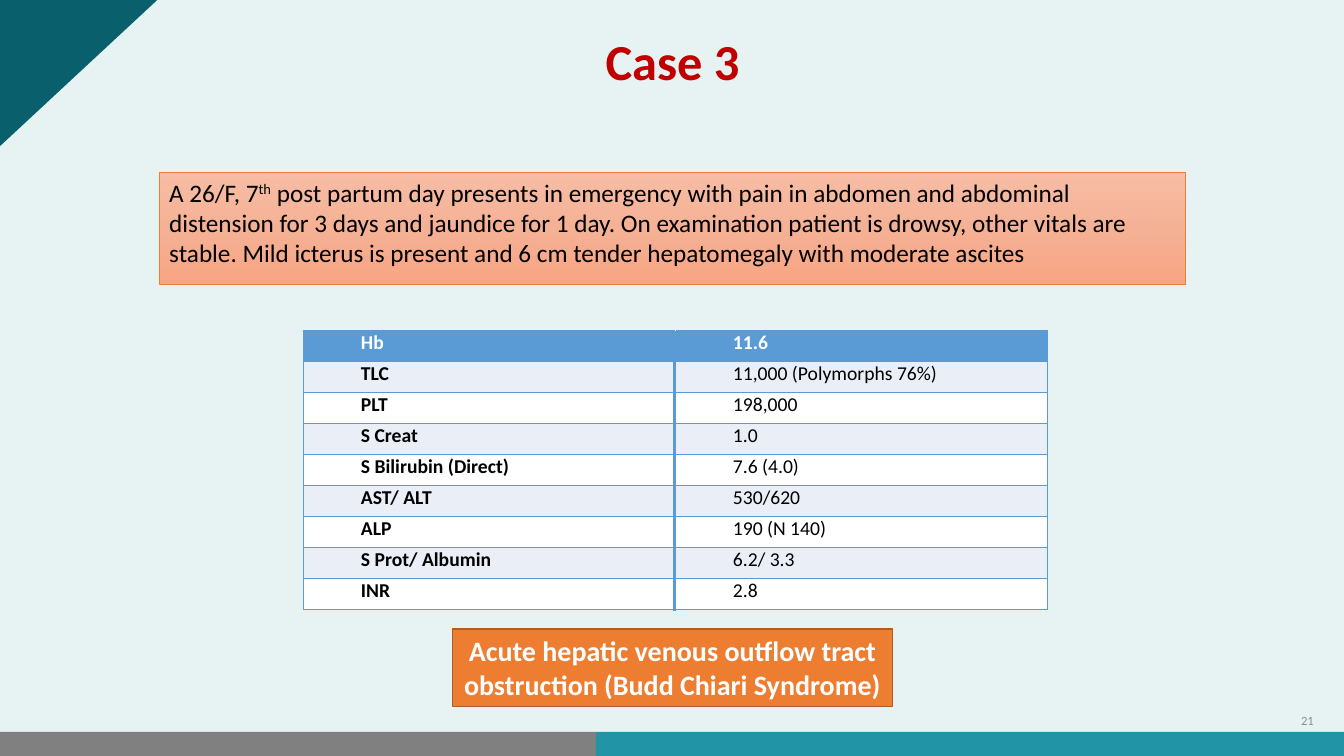
from copy import deepcopy
from dataclasses import dataclass

from lxml.etree import SubElement
from pptx import Presentation
from pptx.dml.color import RGBColor
from pptx.enum.shapes import MSO_CONNECTOR, MSO_SHAPE
from pptx.enum.text import MSO_ANCHOR, PP_ALIGN
from pptx.oxml import parse_xml
from pptx.oxml.ns import nsdecls, qn
from pptx.util import Inches, Pt


@dataclass(frozen=True)
class Theme:
    font: str = "Calibri"
    back: str = "E7F3F3"
    gray: str = "808080"
    dark: str = "095F6C"
    teal: str = "2194A6"
    red: str = "C00000"
    black: str = "000000"
    white: str = "FFFFFF"
    muted: str = "8C8C8C"
    orange: str = "ED7D31"
    rust: str = "AF5C24"
    blue: str = "5B9BD5"
    band: str = "EAEFF7"
    peach: tuple = ("F7BDA5", "F5B196", "F8A582")
    head: int = 36
    answer: int = 20
    body: int = 18
    cell: int = 14
    small: int = 9


THEME = Theme()


def write(frame, text, size=THEME.body, color=THEME.black, bold=False,
          align=PP_ALIGN.LEFT, anchor=MSO_ANCHOR.TOP, before=0, lines=None):
    frame.word_wrap = True
    frame.vertical_anchor = anchor
    para = frame.paragraphs[0]
    para.alignment = align
    para.space_before = Pt(before)
    para.line_spacing = lines
    for i, part in enumerate(text.split("^")):
        run = para.add_run()
        run.text = part
        font = run.font
        font.name, font.size, font.bold = THEME.font, Pt(size), bold
        font.color.rgb = RGBColor.from_string(color)
        if i % 2:
            font._element.set("baseline", "30000")
    return para


class Deck:
    def __init__(self, theme):
        self.theme = theme
        self.file = Presentation()
        self.file.slide_width = Inches(13.33)
        self.file.slide_height = Inches(7.5)
        self.slide = self.file.slides.add_slide(self.file.slide_layouts[5])
        self.shapes = self.slide.shapes
        self.paint(self.slide.background.fill, theme.back)

    def paint(self, fill, color):
        fill.solid()
        fill.fore_color.rgb = RGBColor.from_string(color)

    def title(self, text, *place):
        title = self.shapes.title
        title.left, title.top, title.width, title.height = map(Inches, place)
        write(title.text_frame, text, size=self.theme.head, color=self.theme.red,
              bold=True, align=PP_ALIGN.CENTER, anchor=MSO_ANCHOR.MIDDLE, lines=0.8)

    def box(self, place, fill, line=None, width=1):
        box = self.shapes.add_shape(MSO_SHAPE.RECTANGLE, *map(Inches, place))
        box.shadow.inherit = False
        if isinstance(fill, tuple):
            self.blend(box, fill)
        else:
            self.paint(box.fill, fill)
        if line:
            box.line.color.rgb = RGBColor.from_string(line)
            box.line.width = Pt(width)
        else:
            box.line.fill.background()
        return box.text_frame

    def blend(self, box, colors):
        box.fill.gradient()
        box.fill.gradient_angle = 270
        first = box._element.spPr.find(".//" + qn("a:gs"))
        first.addnext(deepcopy(first))
        last = len(colors) - 1
        for i, (stop, color) in enumerate(zip(box.fill.gradient_stops, colors)):
            stop.position = i / last
            stop.color.rgb = RGBColor.from_string(color)

    def corner(self, width, height):
        form = self.shapes.build_freeform(0, 0)
        form.add_line_segments([(Inches(width), 0), (0, Inches(height))])
        shape = form.convert_to_shape()
        shape.shadow.inherit = False
        self.paint(shape.fill, self.theme.dark)
        shape.line.fill.background()

    def label(self, text, place, **style):
        box = self.shapes.add_textbox(*map(Inches, place))
        write(box.text_frame, text, **style)

    def line(self, start, end, color, width):
        line = self.shapes.add_connector(
            MSO_CONNECTOR.STRAIGHT, *map(Inches, start + end))
        line.line.color.rgb = RGBColor.from_string(color)
        line.line.width = Pt(width)
        SubElement(line._element.spPr, qn("a:effectLst"))

    def border(self, cell, sides):
        props = cell._tc.get_or_add_tcPr()
        for i, side in enumerate(sides):
            props.insert(i, parse_xml(
                f'<a:ln{side} {nsdecls("a")} w="12700"><a:solidFill>'
                f'<a:srgbClr val="{self.theme.blue}"/></a:solidFill></a:ln{side}>'))

    def table(self, rows, place):
        theme = self.theme
        grid = self.shapes.add_table(len(rows), 2, *map(Inches, place)).table
        for r, row in enumerate(rows):
            fill = theme.band if r % 2 else theme.white
            for c, text in enumerate(row):
                cell = grid.cell(r, c)
                cell.margin_left = cell.margin_right = Inches(0.07)
                cell.margin_top = cell.margin_bottom = 0
                para = write(cell.text_frame, text, size=theme.cell,
                             color=theme.black if r else theme.white,
                             bold=r == 0 or c == 0)
                para._p.get_or_add_pPr().set("marL", str(Inches(0.5)))
                self.paint(cell.fill, fill if r else theme.blue)
                self.border(cell, "RTB" if c else "LTB")


def main():
    deck = Deck(THEME)
    deck.box((0, 7.26, 5.91, 0.24), THEME.gray)
    deck.corner(1.56, 1.45)
    deck.box((5.91, 7.26, 7.42, 0.24), THEME.teal)
    story = deck.box((1.58, 1.71, 10.18, 1.11), THEME.peach, THEME.orange, 0.5)
    write(story, "A 26/F, 7^th^ post partum day presents in emergency with pain in "
          "abdomen and abdominal distension for 3 days and jaundice for 1 day. On "
          "examination patient is drowsy, other vitals are stable. Mild icterus is "
          "present and 6 cm tender hepatomegaly with moderate ascites", before=3.6)
    deck.table([
        ("Hb", "11.6"),
        ("TLC", "11,000 (Polymorphs 76%)"),
        ("PLT", "198,000"),
        ("S Creat", "1.0"),
        ("S Bilirubin (Direct)", "7.6 (4.0)"),
        ("AST/ ALT", "530/620"),
        ("ALP", "190 (N 140)"),
        ("S Prot/ Albumin", "6.2/ 3.3"),
        ("INR", "2.8"),
    ], (3.01, 3.28, 7.38, 2.77))
    answer = deck.box((4.49, 6.24, 4.36, 0.77), THEME.orange, THEME.rust)
    write(answer, "Acute hepatic venous outflow tract obstruction "
          "(Budd Chiari Syndrome)", size=THEME.answer, color=THEME.white,
          bold=True, align=PP_ALIGN.CENTER)
    deck.title("Case 3", 4.6, 0.36, 4.14, 0.59)
    deck.line((6.69, 3.28), (6.69, 6.06), THEME.blue, 1.5)
    deck.label("21", (12.67, 6.95, 0.46, 0.4), size=THEME.small, color=THEME.muted,
               align=PP_ALIGN.RIGHT, anchor=MSO_ANCHOR.MIDDLE)
    deck.file.save("out.pptx")


if __name__ == "__main__":
    main()
